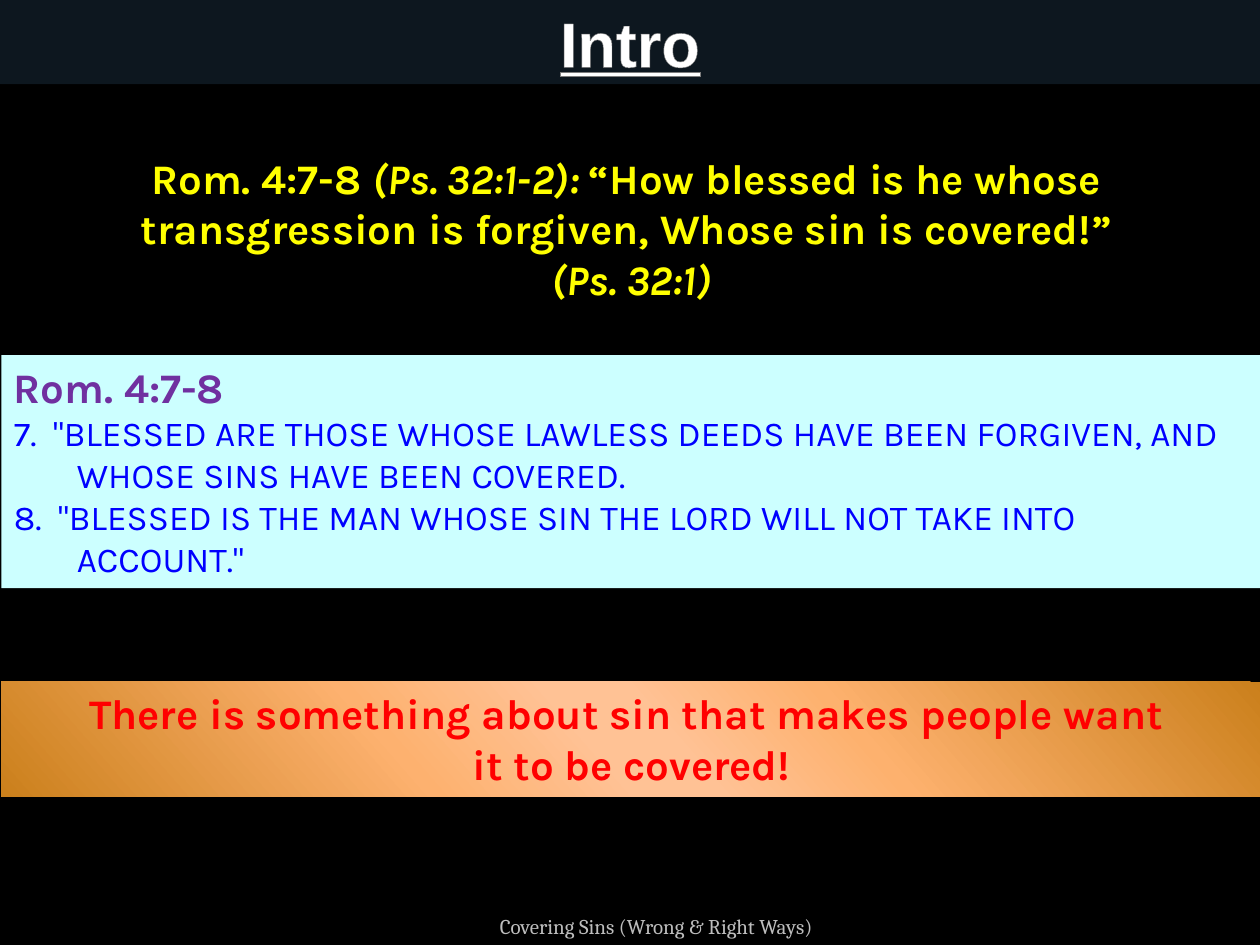
from dataclasses import dataclass

from lxml.etree import SubElement
from pptx import Presentation
from pptx.dml.color import RGBColor
from pptx.enum.shapes import MSO_SHAPE as Shape
from pptx.enum.text import MSO_ANCHOR as Anchor, MSO_AUTO_SIZE as AutoSize, PP_ALIGN as Align
from pptx.oxml import parse_xml
from pptx.oxml.ns import nsdecls, qn
from pptx.util import Cm, Pt


@dataclass(frozen=True)
class Theme:
    background: str = "000000"
    title_band: str = "0D171F"
    scripture_band: str = "CCFFFF"
    yellow: str = "FFFF00"
    purple: str = "7030A0"
    blue: str = "0000FF"
    red: str = "FF0000"
    footer: str = "BDBDBD"
    outline: str = "7D7D7D"
    title_stops: tuple = ((0, "FFFFFF"), (9, "FFFFFF"), (50, "7F7F7F"),
                          (79, "FFFFFF"), (100, "FFFFFF"))
    orange_stops: tuple = ((0, "CB801C"), (33, "FDB16E"), (47, "FFC295"),
                           (53, "FFC295"), (68, "FDB16F"), (100, "CB801C"))
    body_font: str = "Karla"
    title_font: str = "Arial"
    footer_font: str = "Cambria"
    title_size: int = 36
    heading_size: int = 24
    verse_size: int = 20
    footer_size: int = 12


THEME = Theme()
WIDTH = 25.4
HANGING = Cm(1.27)


def gradient(stops, angle):
    marks = "".join(f'<a:gs pos="{place * 1000}"><a:srgbClr val="{color}"/></a:gs>'
                    for place, color in stops)
    return parse_xml(f'<a:gradFill {nsdecls("a")} rotWithShape="1"><a:gsLst>{marks}</a:gsLst>'
                     f'<a:lin ang="{angle * 60000}" scaled="0"/></a:gradFill>')


def add_span(para, text, *, color=None, size=THEME.heading_size, font=THEME.body_font,
             bold=False, italic=False, underline=False):
    span = para.add_run()
    span.text = text
    span.font.size = Pt(size)
    span.font.name = font
    span.font.bold = bold
    span.font.italic = italic
    span.font.underline = underline
    if color:
        span.font.color.rgb = RGBColor.from_string(color)
    return span


def add_para(box, *, align=Align.LEFT, hanging=True):
    frame = box.text_frame
    para = frame.paragraphs[0]
    if para.runs:
        para = frame.add_paragraph()
    para.alignment = align
    if hanging:
        properties = para._p.get_or_add_pPr()
        properties.set("marL", str(HANGING))
        properties.set("indent", str(-HANGING))
    return para


def set_frame(box, anchor=Anchor.TOP, grow=True):
    frame = box.text_frame
    frame.word_wrap = True
    frame.vertical_anchor = anchor
    frame.auto_size = AutoSize.SHAPE_TO_FIT_TEXT if grow else AutoSize.NONE
    return box


def add_text_box(page, left, top, width, height, **frame):
    box = page.shapes.add_textbox(Cm(left), Cm(top), Cm(width), Cm(height))
    return set_frame(box, **frame)


def add_band(page, left, top, height, *, color=None, stops=None, **frame):
    band = page.shapes.add_shape(Shape.RECTANGLE, Cm(left), Cm(top), Cm(WIDTH), Cm(height))
    if stops:
        band._element.spPr.find(qn("a:prstGeom")).addnext(gradient(stops, 139))
    else:
        band.fill.solid()
        band.fill.fore_color.rgb = RGBColor.from_string(color)
    band.line.fill.background()
    band.shadow.inherit = False
    return set_frame(band, **frame)


def add_shadow(band):
    effects = band._element.spPr.find(qn("a:effectLst"))
    shadow = SubElement(effects, qn("a:outerShdw"), blurRad=str(Pt(15)),
                        dist=str(Pt(18)), dir=str(45 * 60000))
    color = SubElement(shadow, qn("a:srgbClr"), val="000000")
    SubElement(color, qn("a:alpha"), val="26000")


def add_title(page):
    band = add_band(page, 0, 0, 1.7, color=THEME.title_band, anchor=Anchor.MIDDLE, grow=False)
    para = add_para(band, align=Align.CENTER, hanging=False)
    span = add_span(para, "Intro", size=THEME.title_size, font=THEME.title_font,
                    bold=True, underline=True)
    properties = span._r.get_or_add_rPr()
    properties.insert(0, gradient(THEME.title_stops, 90))
    properties.insert(0, parse_xml(
        f'<a:ln {nsdecls("a")} w="{Pt(0.83)}"><a:solidFill>'
        f'<a:srgbClr val="{THEME.outline}"/></a:solidFill></a:ln>'))


def add_quotation(page):
    box = add_text_box(page, 0.03, 2.95, WIDTH, 3.33)
    lines = (
        (("Rom. 4:7-8 ", False), ("(Ps. 32:1-2): ", True), ("“How blessed is he whose ", False)),
        (("transgression is forgiven, Whose sin is covered!” ", False),),
        (("(Ps. 32:1)", True),),
    )
    for line in lines:
        para = add_para(box, align=Align.CENTER)
        for text, italic in line:
            add_span(para, text, color=THEME.yellow, bold=True, italic=italic)


def add_scripture(page):
    band = add_band(page, 0.03, 7.16, 4.7, color=THEME.scripture_band)
    add_shadow(band)
    add_span(add_para(band), "Rom. 4:7-8", color=THEME.purple, bold=True)
    for verse in (
        '7.  "BLESSED ARE THOSE WHOSE LAWLESS DEEDS HAVE BEEN FORGIVEN, '
        'AND WHOSE SINS HAVE BEEN COVERED.',
        '8.  "BLESSED IS THE MAN WHOSE SIN THE LORD WILL NOT TAKE INTO ACCOUNT."',
    ):
        add_span(add_para(band), verse, color=THEME.blue, size=THEME.verse_size)


def add_conclusion(page):
    band = add_band(page, 0.03, 13.74, 2.31, stops=THEME.orange_stops)
    add_shadow(band)
    for line in ("There is something about sin that makes people want ", "it to be covered!"):
        add_span(add_para(band, align=Align.CENTER), line, color=THEME.red, bold=True)


def add_footer(page):
    box = add_text_box(page, 8.05, 18.21, 10.36, 0.84, anchor=Anchor.BOTTOM, grow=False)
    para = add_para(box, align=Align.CENTER, hanging=False)
    add_span(para, "Covering Sins (Wrong & Right Ways)", color=THEME.footer,
             size=THEME.footer_size, font=THEME.footer_font)


def main():
    deck = Presentation()
    deck.slide_width, deck.slide_height = Cm(WIDTH), Cm(19.05)
    page = deck.slides.add_slide(deck.slide_layouts[6])
    page.background.fill.solid()
    page.background.fill.fore_color.rgb = RGBColor.from_string(THEME.background)
    add_footer(page)
    add_title(page)
    add_quotation(page)
    add_scripture(page)
    add_conclusion(page)
    deck.save("out.pptx")


if __name__ == "__main__":
    main()
